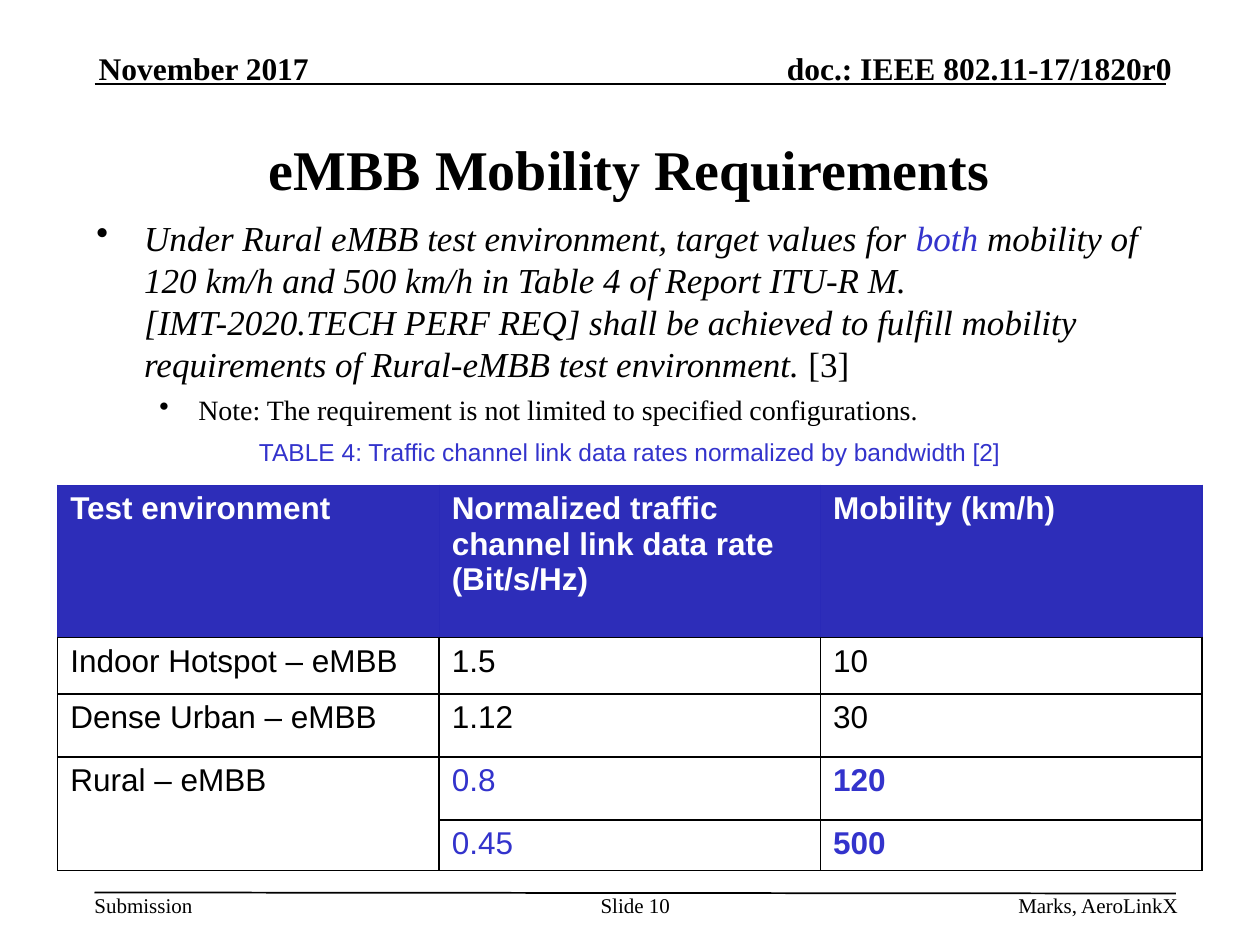
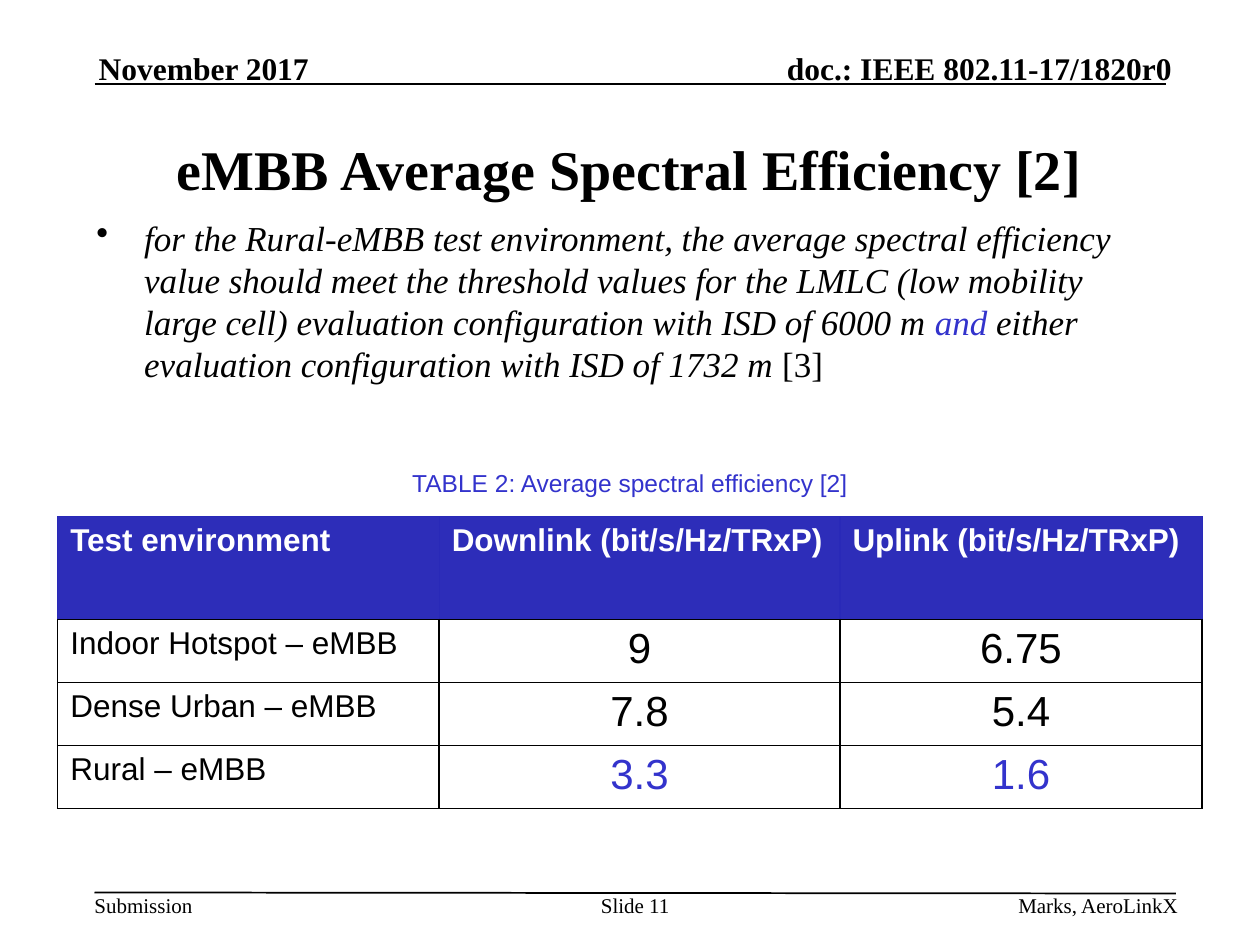
import pptx
import pptx.util
import pptx.dml.color
import pptx.enum.shapes
import pptx.enum.text
import pptx.oxml
import pptx.oxml.ns
from lxml import etree

COLS, ROWS = 120, 90
WIDE, HIGH = pptx.util.Inches(10), pptx.util.Inches(7.5)
INK, BLUE, BAND, EDGE, WHITE = "000000", "3333CC", "2D2DB9", "2929B8", "FFFFFF"
SERIF, SANS = "Times New Roman", "Arial"
ALIGN = pptx.enum.text.PP_ALIGN
ANCHOR = pptx.enum.text.MSO_ANCHOR

HEAD = dict(name=SERIF, size=18, bold=True, color=INK)
FOOT = dict(name=SERIF, size=12, color=INK)
TITLE = dict(name=SERIF, size=32, bold=True, color=INK)
QUOTE = dict(name=SERIF, size=20, italic=True, color=INK)
STRESS = dict(QUOTE, color=BLUE)
CITE = dict(QUOTE, italic=False)
NOTE = dict(CITE, size=16)
LABEL = dict(name=SANS, size=14, color=BLUE)
CELL = dict(name=SANS, size=18, bold=False, color=INK)
TOP = dict(CELL, bold=True, color=WHITE)
HOT = dict(CELL, color=BLUE)
HOT_BOLD = dict(HOT, bold=True)
BIG = dict(CELL, size=24)
BIG_HOT = dict(BIG, color=BLUE)


def rgb(code):
    """Turn a hex string into a colour."""
    return pptx.dml.color.RGBColor.from_string(code)


def across(num):
    """Turn grid columns into a length."""
    return round(WIDE * num / COLS)


def down(num):
    """Turn grid rows into a length."""
    return round(HIGH * num / ROWS)


def place(box):
    """Turn a box of left, top, width and height in grid units into lengths."""
    left, top, width, height = box
    return across(left), down(top), across(width), down(height)


def write(para, runs, align=ALIGN.LEFT):
    """Fill a paragraph with pairs of words and format."""
    para.alignment = align
    for words, form in runs:
        run = para.add_run()
        run.text = words
        for key, value in form.items():
            if key == "color":
                run.font.color.rgb = rgb(value)
            else:
                setattr(run.font, key, pptx.util.Pt(value) if key == "size" else value)


def add_text(slide, box, runs=(), align=ALIGN.LEFT, **form):
    """Add a wrapped text box and return its frame."""
    frame = slide.shapes.add_textbox(*place(box)).text_frame
    frame.word_wrap = True
    for key, value in form.items():
        setattr(frame, key, value)
    write(frame.paragraphs[0], runs, align)
    return frame


def rule(slide, start, end):
    """Draw a thin black line between two grid points."""
    line = slide.shapes.add_connector(
        pptx.enum.shapes.MSO_CONNECTOR.STRAIGHT,
        across(start[0]), down(start[1]), across(end[0]), down(end[1]))
    line.line.color.rgb = rgb(INK)
    line.line.width = pptx.util.Pt(1)
    etree.SubElement(line._element.spPr, pptx.oxml.ns.qn("a:effectLst"))


def add_frame(slide, page):
    """Add the header, the footer and their lines."""
    flat = dict.fromkeys(("margin_left", "margin_top", "margin_right", "margin_bottom"), 0)
    parts = [
        ((9.4, 4.7, 31.2, 3.6), "November 2017", HEAD, ALIGN.LEFT, ANCHOR.BOTTOM),
        ((65.6, 4.7, 46, 3.6), "doc.: IEEE 802.11-17/1820r0", HEAD, ALIGN.RIGHT, ANCHOR.BOTTOM),
        ((9, 85, 12, 2.4), "Submission", FOOT, ALIGN.LEFT, ANCHOR.TOP),
        ((57, 85, 7, 4.8), f"Slide {page}", FOOT, ALIGN.CENTER, ANCHOR.TOP),
        ((81.6, 85, 30.6, 2.4), "Marks, AeroLinkX", FOOT, ALIGN.RIGHT, ANCHOR.TOP),
    ]
    for box, words, form, align, anchor in parts:
        add_text(slide, box, [(words, form)], align, vertical_anchor=anchor, **flat)
    rule(slide, (9, 8), (111, 8))
    rule(slide, (9, 85), (112, 85.1))


def add_title(slide, box, words):
    """Move and format the title placeholder."""
    title = slide.shapes.title
    title.left, title.top, title.width, title.height = place(box)
    frame = title.text_frame
    frame.auto_size = pptx.enum.text.MSO_AUTO_SIZE.NONE
    frame.vertical_anchor = ANCHOR.MIDDLE
    write(frame.paragraphs[0], [(words, TITLE)], ALIGN.CENTER)


def add_points(slide, box, points):
    """Add bulleted paragraphs, one level deeper each."""
    frame = add_text(slide, box)
    steps = [(0.38, 0.38, 6), (0.81, 0.31, 5)]
    for level, (runs, (left, hang, gap)) in enumerate(zip(points, steps)):
        para = frame.add_paragraph() if level else frame.paragraphs[0]
        write(para, runs)
        para.level = level
        para.space_before = pptx.util.Pt(gap)
        props = para._p.get_or_add_pPr()
        props.set("marL", str(pptx.util.Inches(left)))
        props.set("indent", str(-pptx.util.Inches(hang)))
        etree.SubElement(props, pptx.oxml.ns.qn("a:buChar"), char="•")


def edge(cell, side, code, width):
    """Draw one side of a cell."""
    props = cell._tc.get_or_add_tcPr()
    line = etree.SubElement(props, pptx.oxml.ns.qn(f"a:ln{side}"), w=str(pptx.util.Pt(width)))
    fill = etree.SubElement(line, pptx.oxml.ns.qn("a:solidFill"))
    etree.SubElement(fill, pptx.oxml.ns.qn("a:srgbClr"), val=code)


def add_table(slide, box, cols, rows, data, forms, align=ALIGN.LEFT, joins=()):
    """Add a ruled table with a blue head row."""
    table = slide.shapes.add_table(len(rows), len(cols), *place(box)).table
    table.first_row = table.horz_banding = False
    for col, width in zip(table.columns, cols):
        col.width = across(width)
    for row, height in zip(table.rows, rows):
        row.height = down(height)
    for r, line in enumerate(data):
        for c, words in enumerate(line):
            cell = table.cell(r, c)
            for side in "LRTB":
                code, width = (EDGE, 0.75) if r == 0 and side != "B" else (INK, 1)
                edge(cell, side, code, width)
            if r:
                cell.fill.background()
            else:
                cell.fill.solid()
                cell.fill.fore_color.rgb = rgb(BAND)
            if words:
                write(cell.text_frame.paragraphs[0], [(words, forms[r][c])],
                      align if r and c else ALIGN.LEFT)
    for start, end in joins:
        table.cell(*start).merge(table.cell(*end))


def add_slide(deck, page, title, wide, points, deep, label, high, grid):
    """Build a slide of title, points, label and table."""
    slide = deck.slides.add_slide(deck.slide_layouts[5])
    add_frame(slide, page)
    add_title(slide, ((COLS - wide) / 2 - 0.05, 9, wide, 14), title)
    add_points(slide, (8, 20, 102, deep), points)
    add_table(slide, (5.5, high, sum(grid["cols"]), sum(grid["rows"])), **grid)
    add_text(slide, (9, high - 5.2, 102, 6.8), [(label, LABEL)], ALIGN.CENTER)


def main():
    """Build and save the deck."""
    deck = pptx.Presentation()
    deck.slide_width, deck.slide_height = WIDE, HIGH
    add_slide(
        deck, 10, "eMBB Mobility Requirements", 102,
        [[("Under Rural eMBB test environment, target values for ", QUOTE),
          ("both ", STRESS),
          ("mobility of 120 km/h and 500 km/h in Table 4 of Report ITU-R M."
           "[IMT-2020.TECH PERF REQ] shall be achieved to fulfill mobility "
           "requirements of Rural-eMBB test environment.", QUOTE),
          (" [3]", CITE)],
         [("Note: The requirement is not limited to specified configurations.", NOTE)]],
        22, "TABLE 4: Traffic channel link data rates normalized by bandwidth [2]", 46.2,
        dict(cols=[36.33] * 3, rows=[14.5, 5.4, 6, 6, 4.5],
             data=[["Test environment",
                    "Normalized traffic channel link data rate (Bit/s/Hz)",
                    "Mobility (km/h)"],
                   ["Indoor Hotspot – eMBB", "1.5", "10"],
                   ["Dense Urban – eMBB", "1.12", "30"],
                   ["Rural – eMBB", "0.8", "120"],
                   ["", "0.45", "500"]],
             forms=[[TOP] * 3] + [[CELL] * 3] * 2 + [[CELL, HOT, HOT_BOLD]] * 2,
             joins=[((3, 0), (4, 0))]))
    add_slide(
        deck, 11, "eMBB Average Spectral Efficiency [2]", 115,
        [[("for the Rural-eMBB test environment, the average spectral efficiency "
           "value should meet the threshold values for the LMLC (low mobility "
           "large cell) evaluation configuration with ISD of 6000 m ", QUOTE),
          ("and ", STRESS),
          ("either evaluation configuration with ISD of 1732 m ", QUOTE),
          ("[3]", CITE)]],
        29, "TABLE 2: Average spectral efficiency [2]", 49.2,
        dict(cols=[36.33, 38.17, 34.5], rows=[9.8, 5.7, 6, 6],
             data=[["Test environment", "Downlink (bit/s/Hz/TRxP)", "Uplink (bit/s/Hz/TRxP)"],
                   ["Indoor Hotspot – eMBB", "9", "6.75"],
                   ["Dense Urban – eMBB", "7.8", "5.4"],
                   ["Rural – eMBB", "3.3", "1.6"]],
             forms=[[TOP] * 3] + [[CELL, BIG, BIG]] * 2 + [[CELL, BIG_HOT, BIG_HOT]],
             align=ALIGN.CENTER))
    deck.save("out.pptx")


if __name__ == "__main__":
    main()
